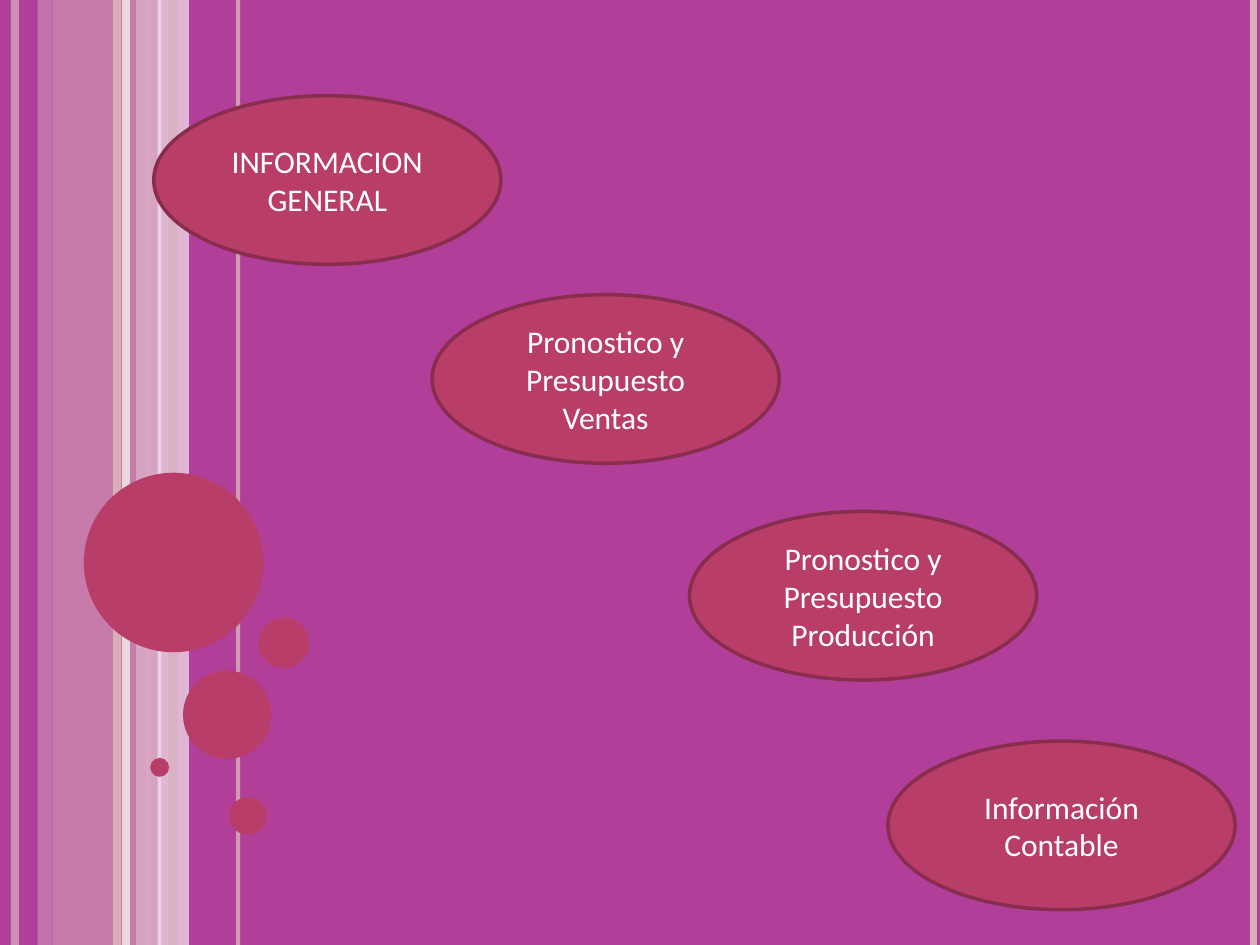
from lxml import etree
from pptx import Presentation
from pptx import util as u
from pptx.dml.color import RGBColor
from pptx.enum import shapes, text
from pptx.oxml.ns import qn

PURPLE = RGBColor(0xB1, 0x3F, 0x9A)
ROSE = RGBColor(0xD8, 0xAF, 0xB9)
LIGHT_ROSE = RGBColor(0xE6, 0xCE, 0xD4)
PALE_ROSE = RGBColor(0xF3, 0xE8, 0xEB)
CRIMSON = RGBColor(0xB8, 0x3D, 0x68)
DARK_CRIMSON = RGBColor(0x88, 0x2D, 0x4D)
WHITE = RGBColor(0xFF, 0xFF, 0xFF)

WIDTH, HEIGHT = 25.4, 19.05
TOPIC_WIDTH, TOPIC_HEIGHT = 7.0, 3.4

# Bands: left, width (cm), colour, opacity (%)
BANDS = [
    (1.06, 1.7, ROSE, 54),
    (0.76, 0.3, LIGHT_ROSE, 36),
    (2.75, 0.5, LIGHT_ROSE, 70),
    (3.18, 0.63, PALE_ROSE, 71),
    (3.39, 0.2, ROSE, 51),
]
# Stripes: x (cm), width (pt), colour, opacity (%)
STRIPES = [
    (0.3, 4.5, ROSE, 73),
    (2.54, 4.5, PALE_ROSE, 83),
    (2.36, 4.5, ROSE, 100),
    (4.8, 2.25, ROSE, 82),
    (2.97, 0.75, ROSE, 100),
    (25.27, 4.5, ROSE, 100),
]
# Bubbles: left, top, diameter (cm)
BUBBLES = [
    (1.69, 9.53, 3.62),
    (3.69, 13.52, 1.78),
    (3.03, 15.28, 0.38),
    (4.62, 16.07, 0.76),
    (5.21, 12.45, 1.02),
]
# Topics: left, top (cm), wording
TOPICS = [
    (3.1, 1.93, "INFORMACION GENERAL"),
    (8.71, 5.94, "Pronostico y Presupuesto Ventas"),
    (13.9, 10.31, "Pronostico y Presupuesto Producción"),
    (17.9, 14.94, "Información Contable"),
]


def set_opacity(element, percent):
    if percent < 100:
        colour = next(element.iter(qn("a:srgbClr")))
        etree.SubElement(colour, qn("a:alpha"), val=str(percent * 1000))


def add_filled(slide, kind, left, top, width, height, colour):
    shape = slide.shapes.add_shape(
        kind, u.Cm(left), u.Cm(top), u.Cm(width), u.Cm(height))
    shape.shadow.inherit = False
    shape.fill.solid()
    shape.fill.fore_color.rgb = colour
    shape.line.fill.background()
    return shape


def add_band(slide, left, width, colour, opacity):
    band = add_filled(slide, shapes.MSO_SHAPE.RECTANGLE,
                      left, 0, width, HEIGHT, colour)
    set_opacity(band.fill._xPr, opacity)


def add_stripe(slide, x, weight, colour, opacity):
    stripe = slide.shapes.add_connector(
        shapes.MSO_CONNECTOR.STRAIGHT, u.Cm(x), 0, u.Cm(x), u.Cm(HEIGHT))
    stripe.line.width = u.Pt(weight)
    stripe.line.color.rgb = colour
    properties = stripe._element.spPr
    set_opacity(properties, opacity)
    etree.SubElement(properties, qn("a:effectLst"))


def add_topic(slide, left, top, wording):
    topic = add_filled(slide, shapes.MSO_SHAPE.OVAL, left, top,
                       TOPIC_WIDTH, TOPIC_HEIGHT, CRIMSON)
    topic.line.color.rgb = DARK_CRIMSON
    topic.line.width = u.Pt(2)
    frame = topic.text_frame
    frame.word_wrap = True
    frame.vertical_anchor = text.MSO_ANCHOR.MIDDLE
    label = frame.paragraphs[0]
    label.text = wording
    label.alignment = text.PP_ALIGN.CENTER
    label.font.name = "Calibri"
    label.font.size = u.Pt(18)
    label.font.color.rgb = WHITE


def main():
    deck = Presentation()
    deck.slide_width, deck.slide_height = u.Cm(WIDTH), u.Cm(HEIGHT)
    slide = deck.slides.add_slide(deck.slide_layouts[6])
    slide.background.fill.solid()
    slide.background.fill.fore_color.rgb = PURPLE

    # Decoration along the edges
    for band in BANDS:
        add_band(slide, *band)
    for stripe in STRIPES:
        add_stripe(slide, *stripe)
    for left, top, diameter in BUBBLES:
        add_filled(slide, shapes.MSO_SHAPE.OVAL,
                   left, top, diameter, diameter, CRIMSON)

    # Topics stepping down the slide
    for topic in TOPICS:
        add_topic(slide, *topic)

    deck.save("out.pptx")


if __name__ == "__main__":
    main()
